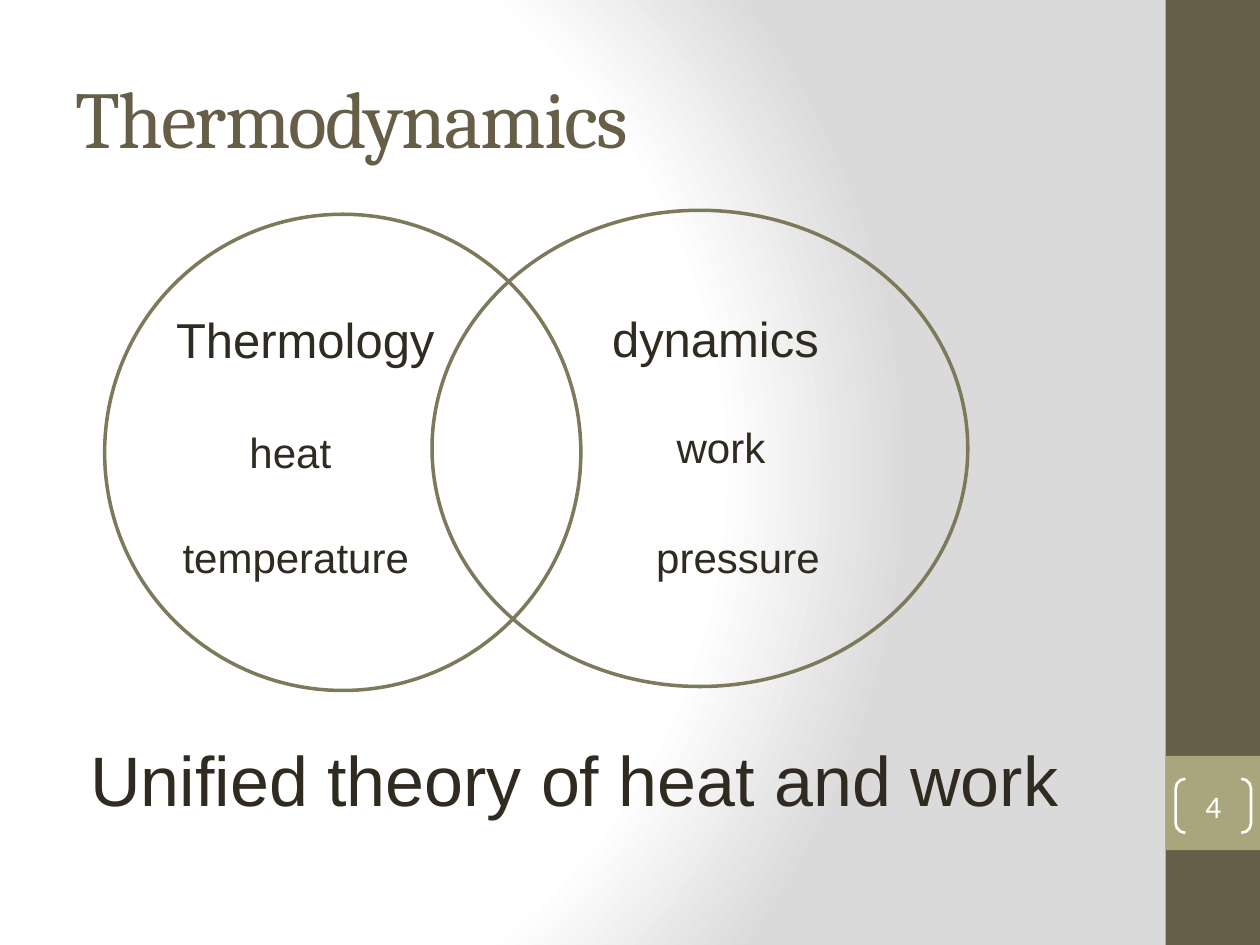
from dataclasses import dataclass

from lxml import etree
from pptx import Presentation
from pptx.dml.color import RGBColor
from pptx.enum.shapes import MSO_SHAPE
from pptx.enum.text import MSO_ANCHOR, MSO_AUTO_SIZE, PP_ALIGN
from pptx.oxml import parse_xml
from pptx.oxml.ns import qn
from pptx.util import Cm, Pt

RECT, OVAL, PAIR = MSO_SHAPE.RECTANGLE, MSO_SHAPE.OVAL, MSO_SHAPE.DOUBLE_BRACKET
MIDDLE, CENTER = MSO_ANCHOR.MIDDLE, PP_ALIGN.CENTER
FIT = MSO_AUTO_SIZE.SHAPE_TO_FIT_TEXT


@dataclass(frozen=True)
class Theme:
    brown: str = "675E47"
    olive: str = "A9A57C"
    ring: str = "7D7A5C"
    ink: str = "2F2B20"
    white: str = "FFFFFF"
    grey: str = "DADADA"
    serif: str = "Cambria"
    sans: str = "Arial"
    number: str = "Calibri"
    title: int = 46
    claim: int = 40
    head: int = 28
    item: int = 24
    small: int = 18


THEME = Theme()


def color(code):
    return RGBColor.from_string(code)


def add_run(frame, text, size, font, code):
    run = frame.paragraphs[0].add_run()
    run.text = text
    run.font.size = Pt(size)
    run.font.name = font
    run.font.color.rgb = color(code)
    return run


def add_form(slide, kind, box, fill=None, line=None, width=2):
    form = slide.shapes.add_shape(kind, *map(Cm, box))
    form.shadow.inherit = False
    if fill:
        form.fill.solid()
        form.fill.fore_color.rgb = color(fill)
    else:
        form.fill.background()
    if line:
        form.line.color.rgb = color(line)
        form.line.width = Pt(width)
    else:
        form.line.fill.background()
    return form


def add_label(slide, box, text, size):
    """Add one unwrapped line whose box fits its text."""
    frame = slide.shapes.add_textbox(*map(Cm, box)).text_frame
    frame.word_wrap = False
    frame.auto_size = FIT
    add_run(frame, text, size, THEME.sans, THEME.ink)


def paint_back(slide):
    """Fill the background with a radial gradient, lightest at the left."""
    slide.background.fill.solid()
    back = slide.element.find(".//" + qn("p:bgPr"))
    grad = parse_xml(
        '<a:gradFill xmlns:a="http://schemas.openxmlformats.org/drawingml/2006/main"'
        ' rotWithShape="1"><a:gsLst/><a:path path="circle">'
        '<a:fillToRect l="20000" t="50000" r="100000" b="50000"/>'
        "</a:path></a:gradFill>"
    )
    for stop, code in ((0, THEME.white), (75, THEME.white), (100, THEME.grey)):
        mark = etree.SubElement(grad[0], qn("a:gs"), pos=str(stop * 1000))
        etree.SubElement(mark, qn("a:srgbClr"), val=code)
    back.replace(back[0], grad)


def add_side(slide, box, number):
    left, top, wide, _ = box
    tile = top + 15.24
    add_form(slide, RECT, box, THEME.brown)
    add_form(slide, RECT, (left, tile, wide, wide), THEME.olive)
    pair = add_form(slide, PAIR, (left + 0.2, tile + 0.46, wide - 0.38, 1.09),
                    line=THEME.white, width=1.5)
    pair.adjustments[0] = 0.18
    frame = pair.text_frame
    frame.margin_left = frame.margin_right = 0
    frame.margin_top = frame.margin_bottom = 0
    frame.vertical_anchor = MIDDLE
    frame.paragraphs[0].alignment = CENTER
    add_run(frame, number, THEME.small, THEME.number, THEME.white)


def add_title(slide, box, text):
    frame = slide.shapes.add_textbox(*map(Cm, box)).text_frame
    frame.word_wrap = True
    frame.vertical_anchor = MIDDLE
    run = add_run(frame, text, THEME.title, THEME.serif, THEME.brown)
    run.font._element.set("spc", "-100")


def add_venn(slide, box):
    left, top, wide, high = box
    ring = high - 0.08
    oval = 10.8
    rings = ((0, 0.08, ring), (wide - oval, 0, oval))
    for x, y, span in rings:
        add_form(slide, OVAL, (left + x, top + y, span, ring), line=THEME.ring)
    labels = (
        ("Thermology", 1.19, 1.88, 5.79, THEME.head),
        ("dynamics", 9.98, 1.86, 4.72, THEME.head),
        ("heat", 2.67, 4.24, 2.18, THEME.item),
        ("temperature", 1.32, 6.35, 5.13, THEME.item),
        ("work", 11.28, 4.14, 2.31, THEME.item),
        ("pressure", 10.87, 6.35, 3.84, THEME.item),
    )
    for text, x, y, span, size in labels:
        tall = 1.45 if size == THEME.head else 1.3
        add_label(slide, (left + x, top + y, span, tall), text, size)


def main():
    deck = Presentation()
    deck.slide_width, deck.slide_height = Cm(25.4), Cm(19.05)
    slide = deck.slides.add_slide(deck.slide_layouts[6])
    paint_back(slide)
    add_side(slide, (23.5, 0, 1.9, 19.05), "4")
    add_title(slide, (1.27, 0.76, 21.16, 3.18), "Thermodynamics")
    add_venn(slide, (2.11, 4.24, 17.4, 9.68))
    add_label(slide, (1.57, 14.73, 20.24, 1.96),
              "Unified theory of heat and work", THEME.claim)
    deck.save("out.pptx")


if __name__ == "__main__":
    main()
